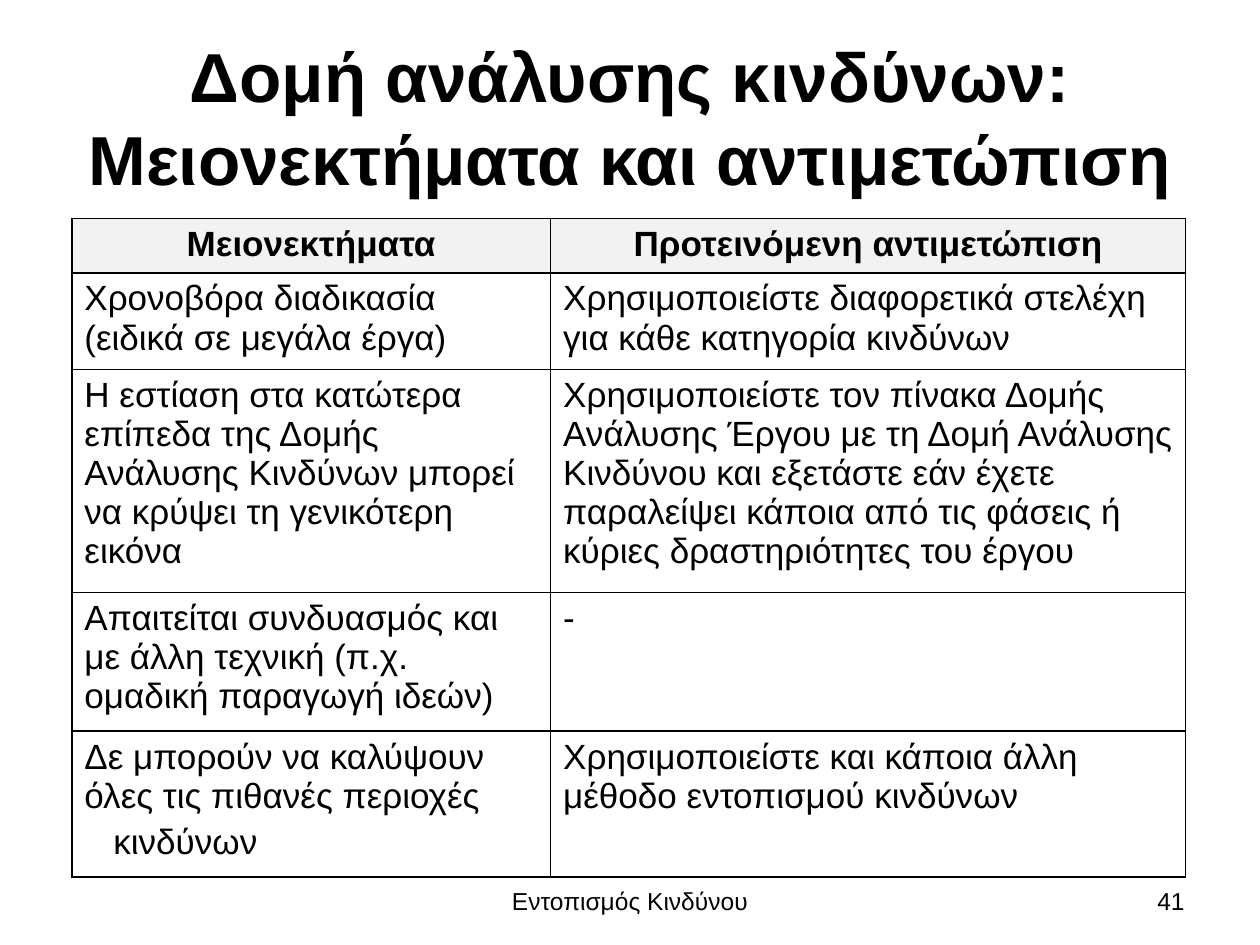
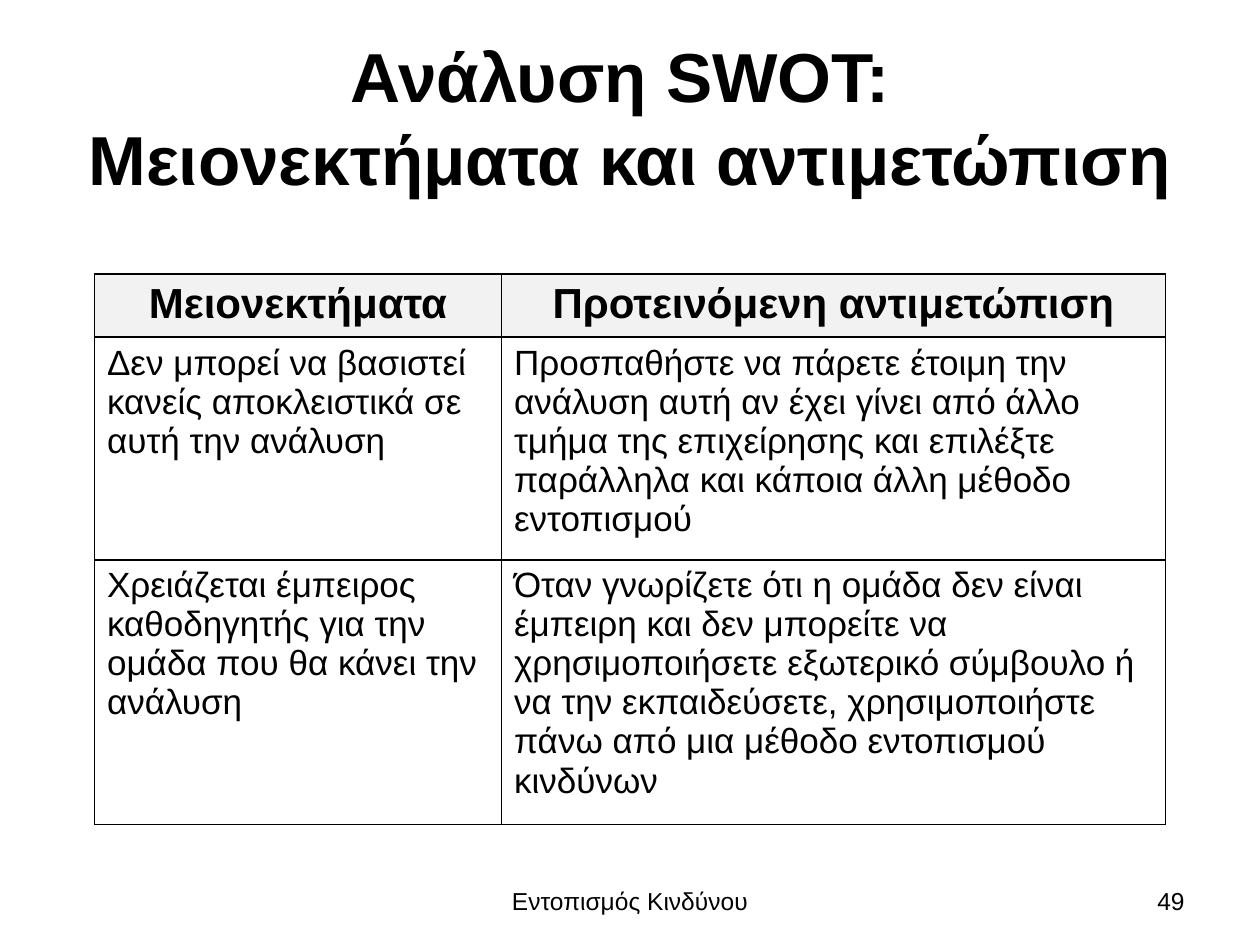
from pptx import Presentation
from pptx.dml.color import RGBColor
from pptx.enum.text import MSO_ANCHOR as Anchor, PP_ALIGN as Align
from pptx.oxml import parse_xml
from pptx.oxml.ns import nsdecls
from pptx.util import Inches, Pt

WIDTH, HEIGHT = 10, 7.5
FONT = "Arial"
COLOURS = {"text": "000000", "border": "000000", "header": "F2F2F2", "body": "FFFFFF"}
BODY_SIZE = 20
HEADINGS = ("Μειονεκτήματα", "Προτεινόμενη αντιμετώπιση")
FOOTER = "Εντοπισμός Κινδύνου"
FOOTER_TOP, FOOTER_HEIGHT = 6.95 / HEIGHT, 0.4 / HEIGHT
FOOTER_WIDTH = 0.317

RISK_ROWS = [
    ("Χρονοβόρα διαδικασία (ειδικά σε μεγάλα έργα)",
     "Χρησιμοποιείστε διαφορετικά στελέχη για κάθε κατηγορία κινδύνων"),
    ("Η εστίαση στα κατώτερα επίπεδα της Δομής Ανάλυσης Κινδύνων μπορεί "
     "να κρύψει τη γενικότερη εικόνα",
     "Χρησιμοποιείστε τον πίνακα Δομής Ανάλυσης Έργου με τη Δομή Ανάλυσης "
     "Κινδύνου και εξετάστε εάν έχετε παραλείψει κάποια από τις φάσεις ή "
     "κύριες δραστηριότητες του έργου"),
    ("Απαιτείται συνδυασμός και με άλλη τεχνική (π.χ. ομαδική παραγωγή ιδεών)", "-"),
    ("Δε μπορούν να καλύψουν όλες τις πιθανές περιοχές\nκινδύνων",
     "Χρησιμοποιείστε και κάποια άλλη μέθοδο εντοπισμού κινδύνων"),
]
SWOT_ROWS = [
    ("Δεν μπορεί να βασιστεί κανείς αποκλειστικά σε αυτή την ανάλυση",
     "Προσπαθήστε να πάρετε έτοιμη την ανάλυση αυτή αν έχει γίνει από άλλο "
     "τμήμα της επιχείρησης και επιλέξτε παράλληλα και κάποια άλλη μέθοδο "
     "εντοπισμού"),
    ("Χρειάζεται έμπειρος καθοδηγητής για την ομάδα που θα κάνει την ανάλυση",
     "Όταν γνωρίζετε ότι η ομάδα δεν είναι έμπειρη και δεν μπορείτε να "
     "χρησιμοποιήσετε εξωτερικό σύμβουλο ή να την εκπαιδεύσετε, "
     "χρησιμοποιήστε πάνω από μια μέθοδο εντοπισμού κινδύνων"),
]


def write_text(frame, text, size=BODY_SIZE, bold=False, align=Align.LEFT, kerning=True):
    """Write one paragraph per line; later paragraphs are spaced and indented."""
    for index, line in enumerate(text.split("\n")):
        para = frame.paragraphs[0] if index == 0 else frame.add_paragraph()
        if index:
            para._p.get_or_add_pPr().set("marL", str(Inches(0.23)))
            para.space_before = Pt(size * 0.2)
        para.alignment = align
        # A vertical tab marks a line break inside the paragraph
        for part, words in enumerate(line.split("\v")):
            if part:
                para.add_line_break()
            span = para.add_run()
            span.text = words
            span.font.name, span.font.size, span.font.bold = FONT, Pt(size), bold
            span.font.color.rgb = RGBColor.from_string(COLOURS["text"])
            if not kerning:
                span._r.get_or_add_rPr().set("kern", "0")


def add_text(page, text, left, top, width, height, **text_format):
    """Add a middle-anchored box, placed in shares of the slide."""
    box = page.shapes.add_textbox(
        Inches(left * WIDTH), Inches(top * HEIGHT),
        Inches(width * WIDTH), Inches(height * HEIGHT))
    box.text_frame.word_wrap = True
    box.text_frame.vertical_anchor = Anchor.MIDDLE
    write_text(box.text_frame, text, **text_format)


def add_borders(cell):
    properties = cell._tc.get_or_add_tcPr()
    for side in "LRTB":
        properties.append(parse_xml(
            f'<a:ln{side} {nsdecls("a")} w="{Pt(1)}"><a:solidFill>'
            f'<a:srgbClr val="{COLOURS["border"]}"/></a:solidFill></a:ln{side}>'))


def add_table(page, rows, left, top, height, columns, row_heights, header_size):
    """Add a bordered table; its rows grow from their least heights to fit the text."""
    frame = page.shapes.add_table(
        len(row_heights), len(columns), Inches(left * WIDTH), Inches(top * HEIGHT),
        Inches(sum(columns)), Inches(height))
    table = frame.table
    table.horz_banding = table.first_row = False
    for column, width in zip(table.columns, columns):
        column.width = Inches(width)
    for row, row_height in zip(table.rows, row_heights):
        row.height = Inches(row_height)
    frame.height = Inches(height)
    for row_index, texts in enumerate([HEADINGS, *rows]):
        is_header = row_index == 0
        for column_index, text in enumerate(texts):
            cell = table.cell(row_index, column_index)
            add_borders(cell)
            cell.fill.solid()
            cell.fill.fore_color.rgb = RGBColor.from_string(
                COLOURS["header" if is_header else "body"])
            write_text(cell.text_frame, text, bold=is_header,
                       size=header_size if is_header else BODY_SIZE,
                       align=Align.CENTER if is_header else Align.LEFT)


def add_page(deck, title, number):
    """Add a blank slide with the shared title, footer and slide number."""
    page = deck.slides.add_slide(deck.slide_layouts[6])
    add_text(page, title, 0.05, 0.04, 0.9, 1 / 6,
             size=39.6, bold=True, align=Align.CENTER, kerning=False)
    add_text(page, FOOTER, (1 - FOOTER_WIDTH) / 2, FOOTER_TOP, FOOTER_WIDTH, FOOTER_HEIGHT,
             size=14, align=Align.CENTER)
    add_text(page, str(number), 0.717, FOOTER_TOP, 0.233, FOOTER_HEIGHT,
             size=14, align=Align.RIGHT)
    return page


def main():
    deck = Presentation()
    deck.slide_width, deck.slide_height = Inches(WIDTH), Inches(HEIGHT)

    # Risk breakdown structure
    page = add_page(deck, "Δομή ανάλυσης κινδύνων: Μειονεκτήματα και αντιμετώπιση", 41)
    add_table(page, RISK_ROWS, 0.057, 0.231, height=5.23, columns=(3.8, 5.04),
              row_heights=(0.43, 0.67, 1.53, 0.95, 0.67), header_size=20)

    # SWOT analysis
    page = add_page(deck, "Ανάλυση SWOT: \vΜειονεκτήματα και αντιμετώπιση", 49)
    add_table(page, SWOT_ROWS, 0.075, 0.29, height=4.37, columns=(3.23, 5.27),
              row_heights=(0.45, 1.6, 1.91), header_size=24)

    deck.save("out.pptx")


if __name__ == "__main__":
    main()
